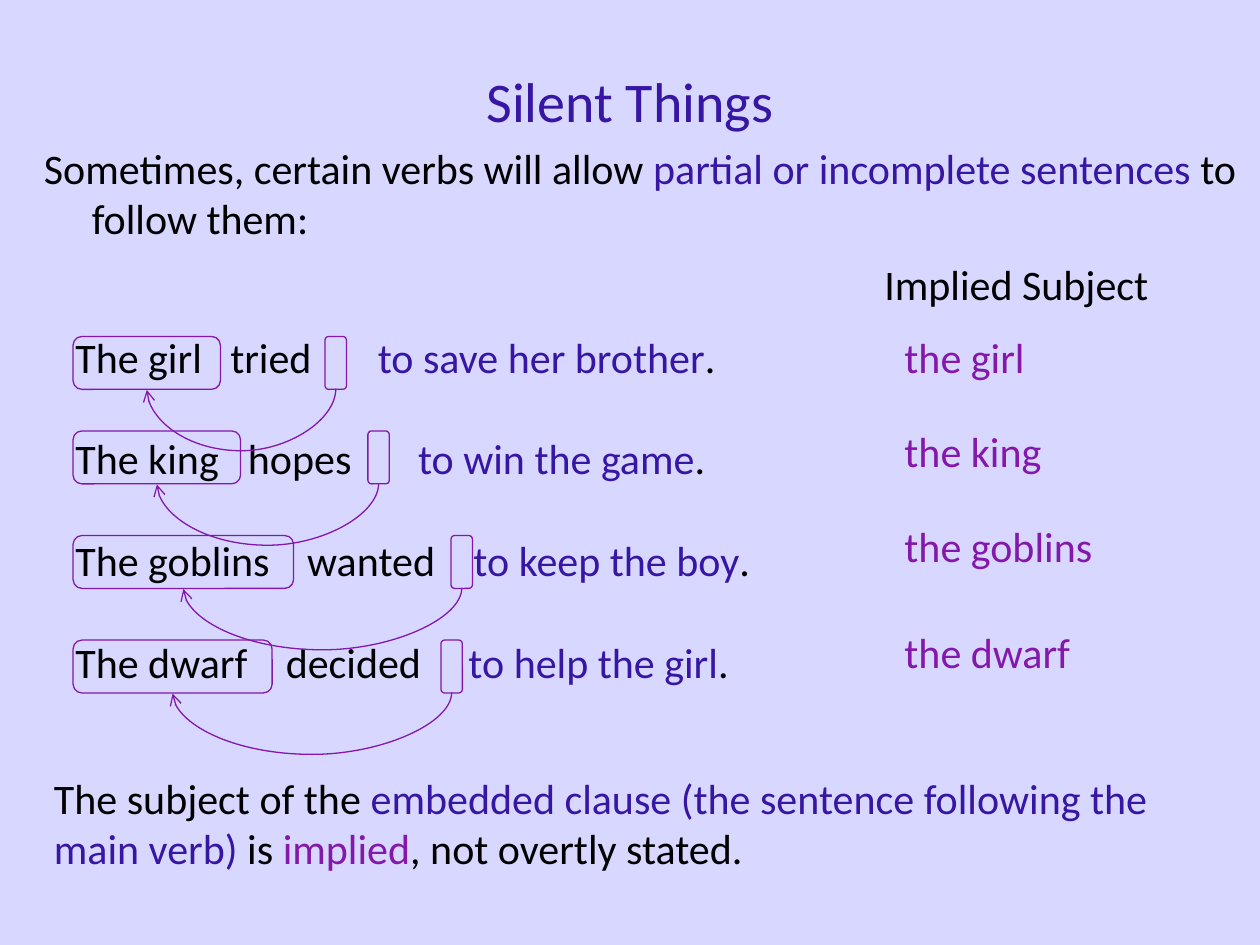
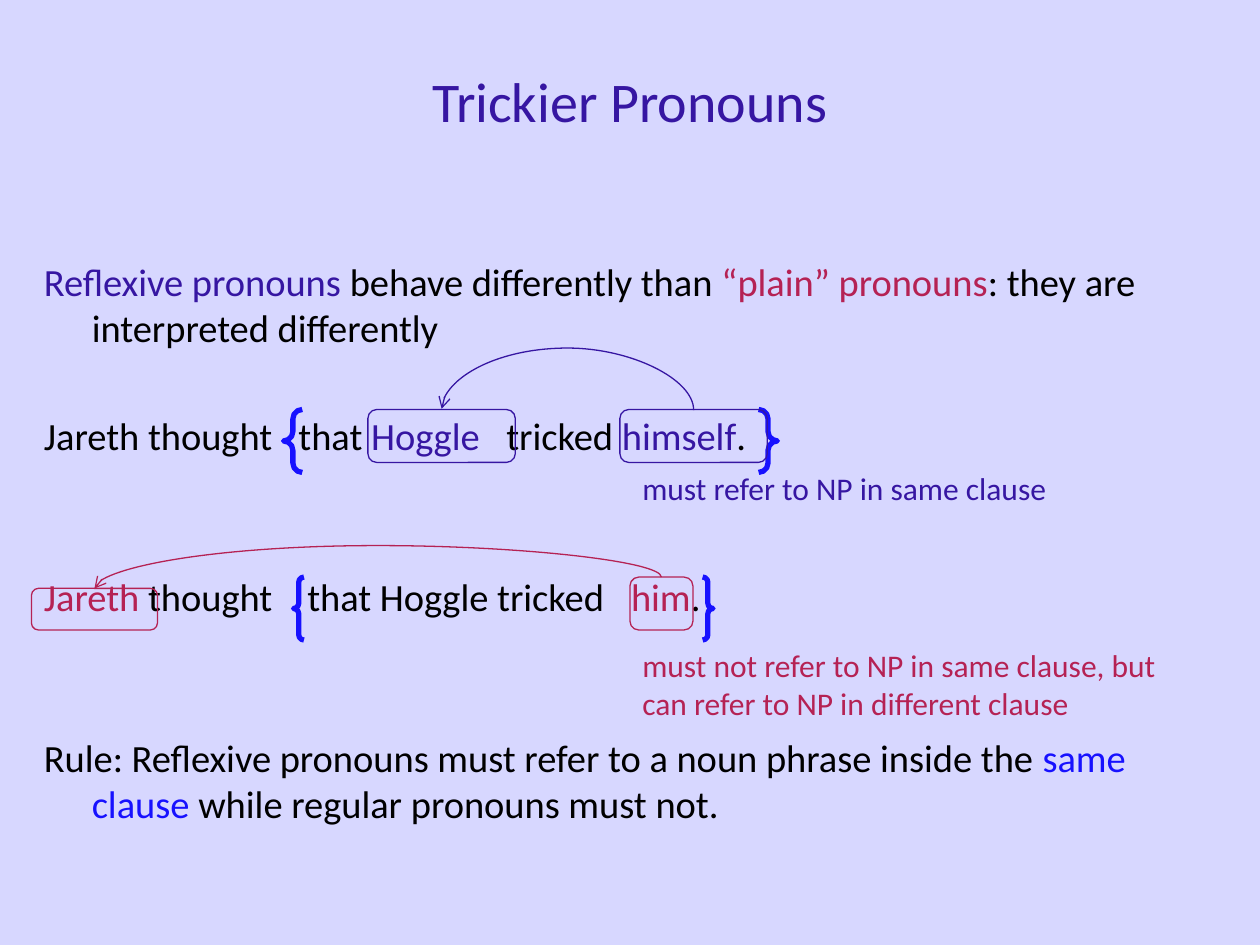
from pptx import Presentation
from pptx import util as u
from pptx.dml.color import RGBColor
from pptx.enum import shapes, text
from pptx.oxml.ns import qn
from lxml import etree

LAVENDER = RGBColor(0xD7, 0xD7, 0xFF)
BLACK = RGBColor(0, 0, 0)
INDIGO = RGBColor(0x36, 0x16, 0xA2)
PURPLE = RGBColor(0x84, 0x18, 0xAA)
CRIMSON = RGBColor(0xB5, 0x22, 0x54)
BLUE = RGBColor(0x17, 0x11, 0xFF)
FONT = "Calibri"
HANGING = 0.38
MIN_DROP = 0.01


def sub(parent, tag, **attributes):
    return etree.SubElement(parent, qn(tag), attributes)


class Lesson:
    def __init__(self):
        self.deck = Presentation()
        self.deck.slide_width = u.Inches(10)
        self.deck.slide_height = u.Inches(7.5)
        fill = self.deck.slide_master.background.fill
        fill.solid()
        fill.fore_color.rgb = LAVENDER
        self.slide = None

    def start(self, heading):
        self.slide = self.deck.slides.add_slide(self.deck.slide_layouts[5])
        title = self.slide.shapes.title
        title.left, title.top, title.width, title.height = map(u.Inches, (0.75, 0.17, 8.5, 1.25))
        title.text_frame.vertical_anchor = text.MSO_ANCHOR.MIDDLE
        line = title.text_frame.paragraphs[0]
        line.alignment = text.PP_ALIGN.CENTER
        self.runs(line, [(heading, INDIGO)], 32)

    def runs(self, line, parts, size):
        for words, color in parts:
            run = line.add_run()
            run.text = words
            run.font.name = FONT
            run.font.size = u.Pt(size)
            run.font.color.rgb = color

    def passage(self, at, lines, size):
        frame = self.slide.shapes.add_textbox(*map(u.Inches, at)).text_frame
        frame.word_wrap = True
        for number, (parts, layout) in enumerate(lines):
            line = frame.add_paragraph() if number else frame.paragraphs[0]
            line.space_before = u.Pt(layout.get("before", 0))
            properties = line._p.get_or_add_pPr()
            if layout.get("hanging"):
                properties.set("marL", str(u.Inches(HANGING)))
                properties.set("indent", str(u.Inches(-HANGING)))
            if "tabs" in layout:
                stops = sub(properties, "a:tabLst")
                for stop in layout["tabs"]:
                    sub(stops, "a:tab", pos=str(u.Inches(stop)), algn="l")
            self.runs(line, parts, size)

    def note(self, at, words, color, size):
        self.passage(at, [([(words, color)], {})], size)

    def outline(self, kind, at, color, weight, roundness):
        shape = self.slide.shapes.add_shape(kind, *map(u.Inches, at))
        shape.adjustments[0] = roundness
        shape.shadow.inherit = False
        shape.fill.background()
        shape.line.color.rgb = color
        shape.line.width = u.Pt(weight)

    def box(self, at, color):
        self.outline(shapes.MSO_SHAPE.ROUNDED_RECTANGLE, at, color, 0.75, 0.167)

    def braces(self, at, roundness):
        self.outline(shapes.MSO_SHAPE.DOUBLE_BRACE, at, BLUE, 3, roundness)

    def arc(self, source, target, color, depth, above=False):
        edge = 0 if above else 1
        start_x, end_x = (b[0] + b[2] / 2 for b in (source, target))
        start_y, end_y = (b[1] + b[3] * edge for b in (source, target))
        lowered = end_y > start_y
        drop = max(end_y - start_y, MIN_DROP)
        span = start_x - end_x
        left = (start_x + end_x - drop) / 2
        top = (start_y + end_y - span) / 2
        curve = self.slide.shapes.add_connector(
            shapes.MSO_CONNECTOR.CURVE,
            *map(u.Inches, (left, top, left + drop, top + span)))
        curve.line.color.rgb = color
        curve.line.width = u.Pt(0.75)
        properties = curve._element.spPr
        frame = properties.find(qn("a:xfrm"))
        frame.set("rot", str((270 if above else 90) * 60000))
        if above:
            frame.set("flipV", "1")
            if lowered:
                frame.set("flipH", "1")
        bend = (-depth if above and lowered else depth) / drop
        geometry = properties.find(qn("a:prstGeom"))
        guides = geometry.find(qn("a:avLst"))
        if guides is None:
            guides = sub(geometry, "a:avLst")
        sub(guides, "a:gd", name="adj1", fmla=f"val {round(bend * 100000)}")
        sub(properties.find(qn("a:ln")), "a:tailEnd", type="arrow")
        sub(properties, "a:effectLst")


def silent_things(lesson):
    lesson.start("Silent Things")
    lesson.passage((0.25, 1.08, 9.75, 1), [([
        ("Sometimes, certain verbs will allow ", BLACK),
        ("partial or incomplete sentences", INDIGO),
        (" to follow them:", BLACK)], {"hanging": True})], 24)

    examples = [
        ("girl", "tried", "to save her brother", (1.23, 2.4), 2.67, 1.17, 2.58, 2.58),
        ("king", "hopes", "to win the game", (1.37, 2.72), 3.42, 1.33, 2.92, 3.33),
        ("goblins", "wanted", "to keep the boy", (1.84, 3.16), 4.25, 1.75, 3.58, 4.08),
        ("dwarf", "decided", "to help the girl", (1.67, 3.12), 5.08, 1.58, 3.5, 4.92),
    ]
    sentences = []
    for number, (noun, verb, clause, tabs, *_) in enumerate(examples):
        parts = [(f"The {noun}\t{verb}\t", BLACK), (clause, INDIGO), (".", BLACK)]
        sentences.append((parts, {"tabs": tabs, "before": 29.3 if number else 0}))
    lesson.passage((0.5, 2.58, 8.33, 2.93), sentences, 24)

    lesson.passage((0.33, 6.08, 9.17, 0.91), [([
        ("The subject of the ", BLACK),
        ("embedded clause (the sentence following the main verb) ", INDIGO),
        ("is ", BLACK),
        ("implied", PURPLE),
        (", not overtly stated.", BLACK)], {})], 24)

    lesson.note((6.92, 2, 2.6, 0.5), "Implied Subject", BLACK, 24)
    for noun, _, _, _, top, width, gap_left, answer_top in examples:
        lesson.note((7.08, answer_top, 2, 0.5), f"the {noun}", PURPLE, 24)
        subject = (0.58, top, width, 0.42)
        gap = (gap_left, top, 0.17, 0.42)
        lesson.box(subject, PURPLE)
        lesson.box(gap, PURPLE)
        lesson.arc(gap, subject, PURPLE, 0.5)


def trickier_pronouns(lesson):
    lesson.start("Trickier Pronouns")
    one_line, two_lines = (4 + 30.85 * count for count in (1, 2))
    lesson.passage((0.25, 2, 9.42, 5.08), [
        ([("Reflexive pronouns ", INDIGO),
          ("behave differently than ", BLACK),
          ("“plain” pronouns", CRIMSON),
          (": they are interpreted differently", BLACK)], {"hanging": True}),
        ([("Jareth thought\tthat ", BLACK),
          ("Hoggle", INDIGO),
          ("\ttricked ", BLACK),
          ("himself", INDIGO),
          (".", BLACK)], {"before": one_line, "tabs": (2.02, 3.67)}),
        ([("Jareth", CRIMSON),
          (" thought\tthat Hoggle tricked\t", BLACK),
          ("him", CRIMSON),
          (".", BLACK)], {"before": two_lines, "tabs": (2.09, 4.66)}),
        ([("Rule: Reflexive pronouns must refer to a noun phrase inside the ", BLACK),
          ("same clause ", BLUE),
          ("while regular pronouns must not.", BLACK)],
         {"before": two_lines, "hanging": True}),
    ], 22)

    lesson.braces((2.25, 3.25, 3.92, 0.5), 0.149)
    lesson.braces((2.33, 4.58, 3.33, 0.5), 0.083)

    himself, hoggle = ((left, 3.25, 1.17, 0.42) for left in (4.92, 2.92))
    him, jareth = (5, 4.58, 0.5, 0.42), (0.25, 4.67, 1, 0.33)
    for pronoun, antecedent, color, depth in (
            (himself, hoggle, INDIGO, 0.5), (him, jareth, CRIMSON, 0.25)):
        lesson.arc(pronoun, antecedent, color, depth, above=True)
        lesson.box(pronoun, color)
        lesson.box(antecedent, color)

    lesson.note((5, 3.67, 4.5, 0.4), "must refer to NP in same clause", INDIGO, 18)
    lesson.note((5, 5.08, 4.5, 0.7),
                "must not refer to NP in same clause, but can refer to NP in different clause",
                CRIMSON, 18)


def main():
    lesson = Lesson()
    silent_things(lesson)
    trickier_pronouns(lesson)
    lesson.deck.save("out.pptx")


if __name__ == "__main__":
    main()
